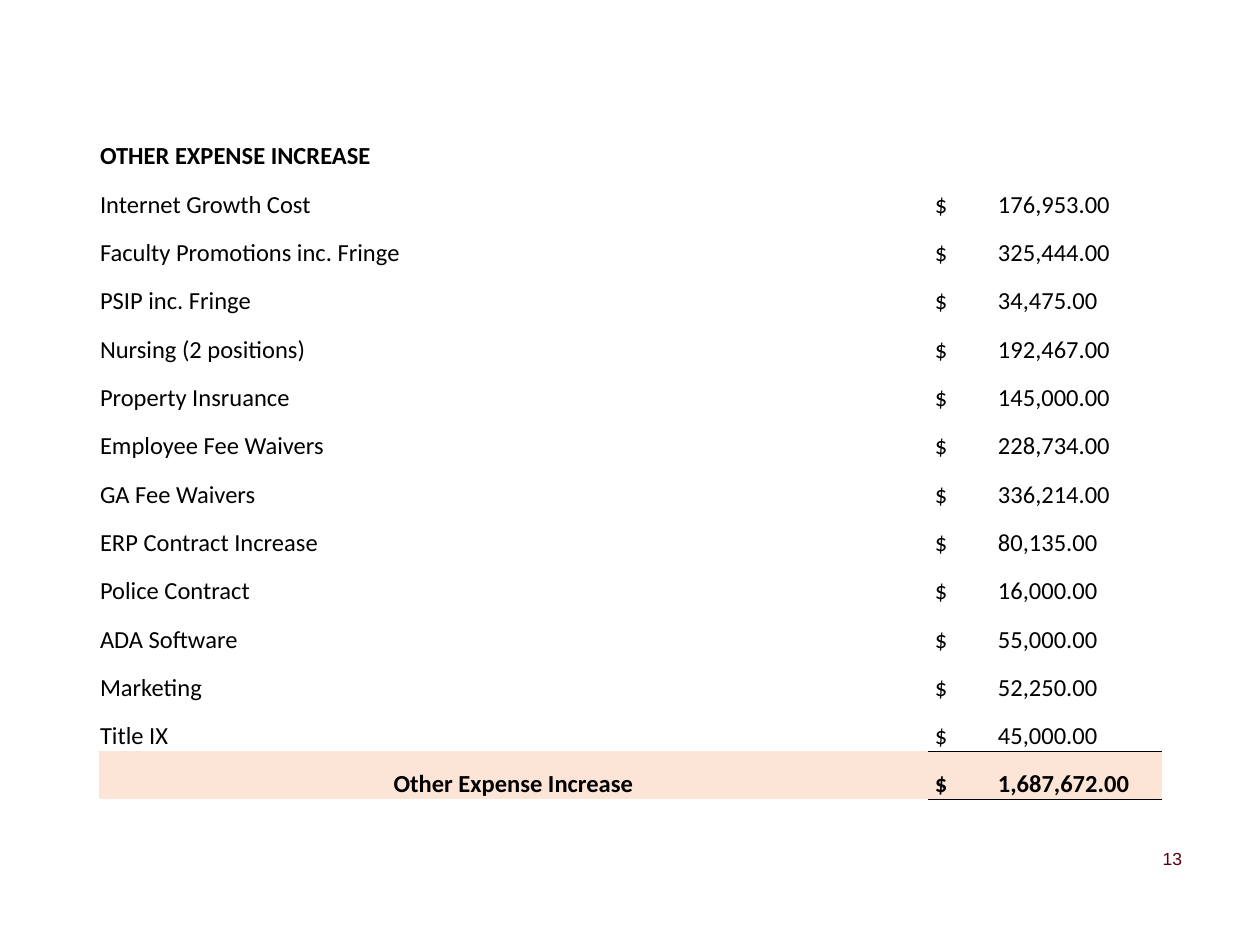
from typing import NamedTuple

from lxml.etree import SubElement
from pptx import Presentation
from pptx.dml.color import RGBColor
from pptx.enum.text import MSO_ANCHOR, PP_ALIGN
from pptx.oxml import parse_xml
from pptx.oxml.ns import nsdecls, qn
from pptx.table import Table, _Cell
from pptx.util import Emu, Pt

BLACK = RGBColor(0x00, 0x00, 0x00)
PEACH = RGBColor(0xFC, 0xE4, 0xD6)
MAROON = RGBColor(0x5E, 0x00, 0x09)
NO_STYLE_NO_GRID = "{2D5ABB26-0587-4C30-8999-92F81FD0307C}"
EMU_PER_PX = 914400 / 126

TABLE_LEFT, TABLE_TOP, TABLE_HEIGHT = 99, 123, 677
LABEL_WIDTH, AMOUNT_WIDTH = 829, 234
AMOUNT_INDENT, AMOUNT_TAB = 7, 162


class Expense(NamedTuple):
    label: str
    amount: str


EXPENSES = [
    Expense("Internet Growth Cost", "176,953.00"),
    Expense("Faculty Promotions inc. Fringe", "325,444.00"),
    Expense("PSIP inc. Fringe", "34,475.00"),
    Expense("Nursing (2 positions)", "192,467.00"),
    Expense("Property Insruance", "145,000.00"),
    Expense("Employee Fee Waivers", "228,734.00"),
    Expense("GA Fee Waivers", "336,214.00"),
    Expense("ERP Contract Increase", "80,135.00"),
    Expense("Police Contract", "16,000.00"),
    Expense("ADA Software", "55,000.00"),
    Expense("Marketing", "52,250.00"),
    Expense("Title IX", "45,000.00"),
]
TOTAL = Expense("Other Expense Increase", "1,687,672.00")


def px(length: float) -> Emu:
    return Emu(round(length * EMU_PER_PX))


def write_cell(cell: _Cell, text: str, bold: bool = False, indent: int = 1) -> None:
    cell.text = text
    cell.vertical_anchor = MSO_ANCHOR.BOTTOM
    cell.margin_left, cell.margin_right = px(indent), px(1)
    cell.margin_top, cell.margin_bottom = px(1), 0
    cell.fill.background()
    font = cell.text_frame.paragraphs[0].font
    font.name, font.size, font.bold = "Calibri", Pt(14), bold
    font.color.rgb = BLACK


def write_expense(table: Table, row: int, expense: Expense, bold: bool = False) -> None:
    label, amount = table.cell(row, 0), table.cell(row, 1)
    write_cell(label, expense.label, bold)
    properties = amount.text_frame.paragraphs[0]._p.get_or_add_pPr()
    tabs = SubElement(properties, qn("a:tabLst"))
    SubElement(tabs, qn("a:tab"), pos=str(px(AMOUNT_TAB)), algn="r")
    write_cell(amount, f"$\t{expense.amount}", bold, AMOUNT_INDENT)


def rule_cell(cell: _Cell, *sides: str) -> None:
    """Draw thin borders on the given sides, named in schema order (T, B)."""
    properties = cell._tc.get_or_add_tcPr()
    for position, side in enumerate(sides):
        properties.insert(position, parse_xml(
            f'<a:ln{side} {nsdecls("a")} w="{Pt(0.5)}"><a:solidFill>'
            f'<a:srgbClr val="{BLACK}"/></a:solidFill></a:ln{side}>'))


def add_expense_table(slide) -> None:
    row_count = len(EXPENSES) + 2
    table = slide.shapes.add_table(
        row_count, 2, px(TABLE_LEFT), px(TABLE_TOP),
        px(LABEL_WIDTH + AMOUNT_WIDTH), px(TABLE_HEIGHT)).table
    table.first_row = table.horz_banding = False
    table._tbl.tblPr.find(qn("a:tableStyleId")).text = NO_STYLE_NO_GRID
    table.columns[0].width, table.columns[1].width = px(LABEL_WIDTH), px(AMOUNT_WIDTH)
    for row in table.rows:
        row.height = px(TABLE_HEIGHT / row_count)

    heading = table.cell(0, 0)
    heading.merge(table.cell(0, 1))
    write_cell(heading, "OTHER EXPENSE INCREASE", bold=True)
    for row_index, expense in enumerate(EXPENSES, start=1):
        write_expense(table, row_index, expense)

    total_row = row_count - 1
    write_expense(table, total_row, TOTAL, bold=True)
    total_label, total_amount = table.cell(total_row, 0), table.cell(total_row, 1)
    total_label.text_frame.paragraphs[0].alignment = PP_ALIGN.CENTER
    for cell in (total_label, total_amount):
        cell.fill.solid()
        cell.fill.fore_color.rgb = PEACH
    rule_cell(table.cell(total_row - 1, 1), "B")
    rule_cell(total_amount, "T", "B")


def add_page_number(slide, number: str) -> None:
    frame = slide.shapes.add_textbox(px(1119), px(835), px(63), px(47)).text_frame
    frame.word_wrap = True
    frame.vertical_anchor = MSO_ANCHOR.MIDDLE
    frame.margin_left = frame.margin_right = frame.margin_top = frame.margin_bottom = 0
    paragraph = frame.paragraphs[0]
    paragraph.text = number
    paragraph.alignment = PP_ALIGN.RIGHT
    paragraph.font.name, paragraph.font.size = "Arial", Pt(10)
    paragraph.font.color.rgb = MAROON


def main() -> None:
    presentation = Presentation()
    presentation.slide_width, presentation.slide_height = px(1260), px(945)
    slide = presentation.slides.add_slide(presentation.slide_layouts[6])
    add_page_number(slide, "13")
    add_expense_table(slide)
    presentation.save("out.pptx")


if __name__ == "__main__":
    main()
